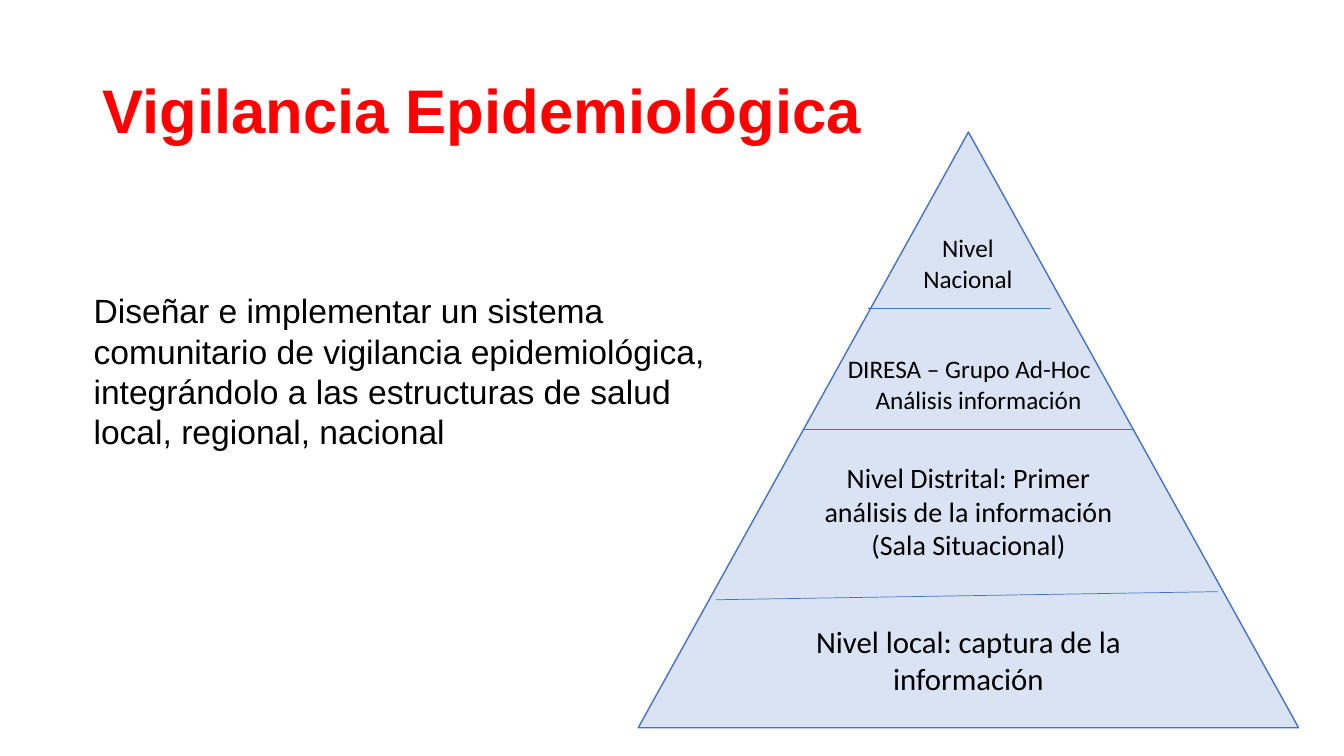
from dataclasses import dataclass

import pptx
import pptx.dml.color
import pptx.enum.shapes
import pptx.enum.text
import pptx.oxml
import pptx.oxml.ns
import pptx.util

Inches = pptx.util.Inches
Pt = pptx.util.Pt
Align = pptx.enum.text.PP_ALIGN
Anchor = pptx.enum.text.MSO_ANCHOR


@dataclass(frozen=True)
class Theme:
    blue: str = "4472C4"
    pale: str = "DAE3F3"
    red: str = "FF0000"
    black: str = "000000"
    head: str = "Arial"
    body: str = "Calibri"
    title: int = 44
    lead: int = 24
    base: int = 22
    mid: int = 20
    small: int = 18


@dataclass(frozen=True)
class Line:
    text: str
    size: int
    font: str
    color: str = "000000"
    bold: bool = False
    align: Align = Align.LEFT
    before: float = 0
    pitch: float = 1.0


@dataclass(frozen=True)
class Box:
    left: float
    top: float
    width: float
    height: float
    lines: list[Line]
    wrap: bool = True
    anchor: Anchor = Anchor.TOP


@dataclass(frozen=True)
class Rule:
    left: float
    start: float
    right: float
    end: float


THEME = Theme()


def paint(code: str) -> pptx.dml.color.RGBColor:
    return pptx.dml.color.RGBColor.from_string(code)


def write(frame, lines: list[Line]) -> None:
    for spot, line in enumerate(lines):
        para = frame.add_paragraph() if spot else frame.paragraphs[0]
        para.alignment = line.align
        para.line_spacing = line.pitch
        if line.before:
            para.space_before = Pt(line.before)
        run = para.add_run()
        run.text = line.text
        run.font.size = Pt(line.size)
        run.font.name = line.font
        run.font.bold = line.bold
        run.font.color.rgb = paint(line.color)


def place(box: Box) -> tuple:
    return tuple(Inches(n) for n in (box.left, box.top, box.width, box.height))


def draw_peak(slide, box: Box) -> None:
    kind = pptx.enum.shapes.MSO_SHAPE.ISOSCELES_TRIANGLE
    peak = slide.shapes.add_shape(kind, *place(box))
    peak.shadow.inherit = False
    peak.fill.solid()
    peak.fill.fore_color.rgb = paint(THEME.pale)
    peak.line.color.rgb = paint(THEME.blue)
    peak.line.width = Pt(1)
    fill_text(peak.text_frame, box)


def fill_text(frame, box: Box) -> None:
    frame.word_wrap = box.wrap
    frame.vertical_anchor = box.anchor
    write(frame, box.lines)


def draw_box(slide, box: Box) -> None:
    fill_text(slide.shapes.add_textbox(*place(box)).text_frame, box)


def draw_rule(slide, rule: Rule) -> None:
    ends = (rule.left, rule.start, rule.right, rule.end)
    kind = pptx.enum.shapes.MSO_CONNECTOR.STRAIGHT
    link = slide.shapes.add_connector(kind, *(Inches(n) for n in ends))
    link.line.color.rgb = paint(THEME.blue)
    link.line.width = Pt(0.5)
    pptx.oxml.ns.qn("a:effectLst")
    props = link._element.spPr
    props.append(props.makeelement(pptx.oxml.ns.qn("a:effectLst"), {}))


def label(text: str, size: int = THEME.small, align: Align = Align.CENTER,
          before: float = 0) -> Line:
    return Line(text, size, THEME.body, align=align, before=before)


# Pyramid with its two lower levels
PEAK = Box(6.33, 1.31, 6.55, 5.91, [
    label("Nivel Distrital: Primer análisis de la información (Sala Situacional)",
          THEME.mid),
    label("Nivel local: captura de la información", THEME.base, before=44),
], anchor=Anchor.MIDDLE)

# Lines between levels
RULES = [
    Rule(7.1, 5.95, 12.08, 5.87),
    Rule(7.97, 4.26, 11.24, 4.26),
    Rule(8.61, 3.06, 10.42, 3.06),
]

# Upper levels, title and lead text
BOXES = [
    Box(8.31, 3.46, 2.79, 0.71, [
        label("DIRESA – Grupo Ad-Hoc", align=Align.LEFT),
        label("Análisis información"),
    ]),
    Box(9.05, 2.26, 1.1, 0.71, [label("Nivel"), label("Nacional")], wrap=False),
    Box(0.92, 0.4, 11.5, 1.45, [
        Line("Vigilancia Epidemiológica", THEME.title, THEME.head, THEME.red,
             bold=True, pitch=0.9),
    ], anchor=Anchor.MIDDLE),
    Box(0.83, 2.83, 6.33, 1.72, [
        Line(text, THEME.lead, THEME.head, THEME.black) for text in (
            "Diseñar e implementar un sistema",
            "comunitario de vigilancia epidemiológica,",
            "integrándolo a las estructuras de salud",
            "local, regional, nacional",
        )
    ], wrap=False),
]


def main() -> None:
    deck = pptx.Presentation()
    deck.slide_width = Inches(13.33)
    deck.slide_height = Inches(7.5)
    slide = deck.slides.add_slide(deck.slide_layouts[6])
    draw_peak(slide, PEAK)
    for rule in RULES:
        draw_rule(slide, rule)
    for box in BOXES:
        draw_box(slide, box)
    deck.save("out.pptx")


if __name__ == "__main__":
    main()
